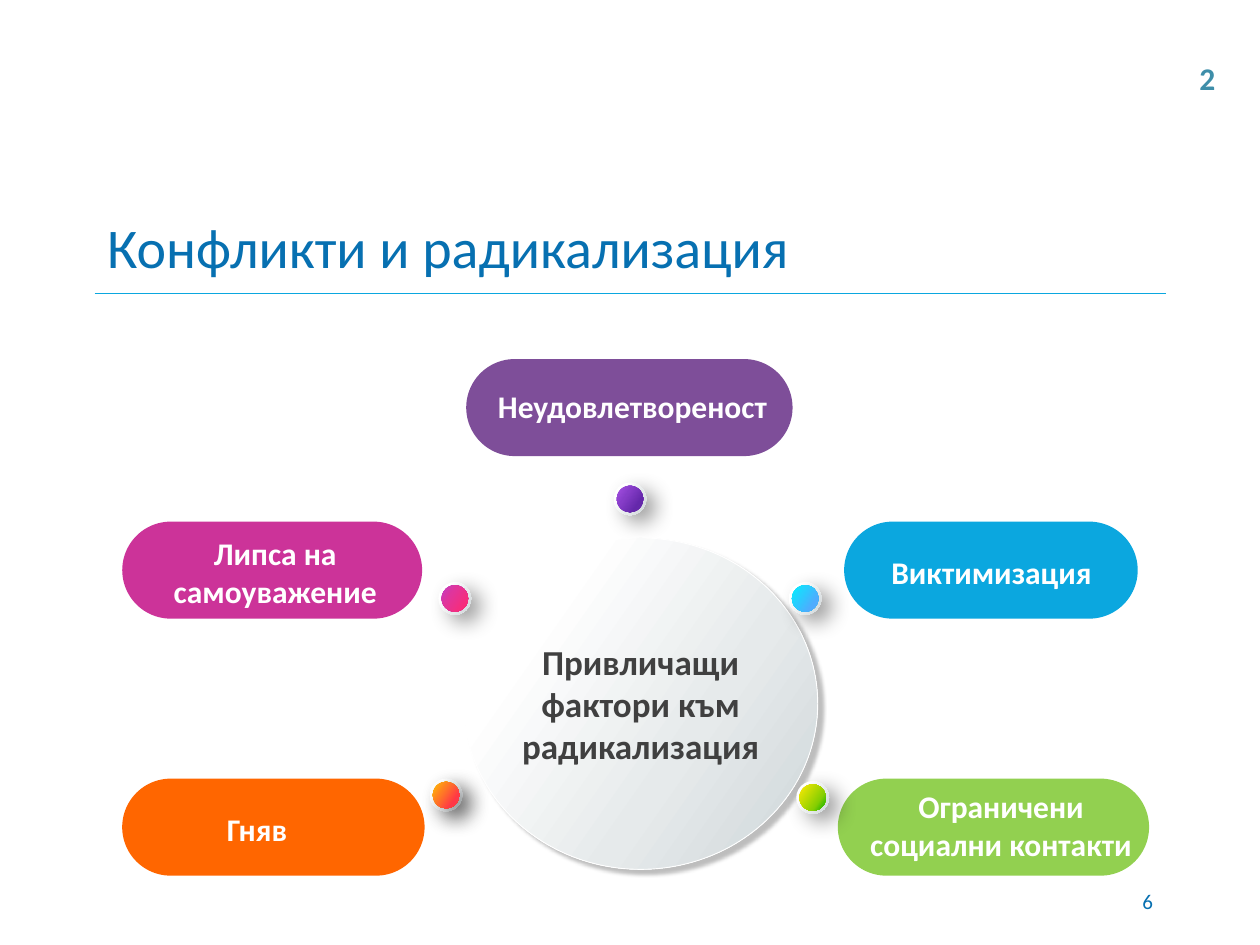
from lxml.etree import SubElement
from pptx import Presentation
from pptx.dml.color import RGBColor
from pptx.enum.shapes import MSO_CONNECTOR, MSO_SHAPE
from pptx.enum.text import MSO_ANCHOR, PP_ALIGN
from pptx.oxml.ns import qn
from pptx.util import Inches, Pt

TITLE = "Конфликти и радикализация"
CENTER = "Привличащи фактори към радикализация"
SILVER = [(23, "FFFFFF"), (63, "E6EAEB"), (100, "CDD5D8")]
HUB_SHADOW = ("000000", 26, 2, 3.7)
BEAD_SHADOW = ("000000", 38, 12, 7.1)
PILL_H, HALO, CORE = 0.77, 0.26, 0.21
ROWS = {"top": 2.85, "middle": 4.14, "bottom": 6.18}
FACTORS = [
    {"text": "Гняв", "label": (1.33, 6.39, 1.42, 0.38),
     "row": "bottom", "pill": (0.97, 2.4), "color": "FF6600", "bead": (3.41, 6.18),
     "core": [(0, "FFC203"), (37, "FF7D25"), (77, "FF3847")], "core_shadow": BEAD_SHADOW},
    {"text": "Липса на самоуважение", "label": (1.08, 4.2, 2.21, 0.68),
     "row": "middle", "pill": (0.97, 2.38), "color": "CC3399", "bead": (3.48, 4.62),
     "core": [(1, "C23FC6"), (36, "E1359B"), (98, "FF2A70")]},
    {"text": "Неудовлетвореност", "label": (3.9, 3.03, 2.24, 0.38),
     "row": "top", "pill": (3.7, 2.59), "color": "7E4E99", "bead": (4.87, 3.83),
     "core": [(0, "A852E6"), (37, "863DC8"), (77, "6428AA")]},
    {"text": "Виктимизация", "label": (7, 4.35, 1.74, 0.38),
     "row": "middle", "pill": (6.7, 2.33), "color": "0BA7DF", "bead": (6.26, 4.62),
     "core": [(0, "00F2FE"), (37, "28CFFE"), (77, "4FACFE")]},
    {"text": "Ограничени социални контакти", "label": (6.77, 6.21, 2.35, 0.68),
     "row": "bottom", "pill": (6.65, 2.47), "color": "92D050", "bead": (6.32, 6.2),
     "core": [(0, "FFEA03"), (71, "85CE02"), (98, "0CB100")]},
]


def rgb(value):
    return RGBColor.from_string(value)


def write(tf, text, size, color, bold=False, align=PP_ALIGN.CENTER,
          anchor=MSO_ANCHOR.TOP, inset=None, wrap=True):
    tf.word_wrap = wrap
    tf.vertical_anchor = anchor
    if inset is not None:
        tf.margin_left = tf.margin_right = tf.margin_top = tf.margin_bottom = Inches(inset)
    p = tf.paragraphs[0]
    p.text = text
    p.alignment = align
    p.font.name, p.font.size, p.font.bold = "Calibri", Pt(size), bold
    p.font.color.rgb = rgb(color)


def add_text(s, box, *args, **kwargs):
    write(s.shapes.add_textbox(*map(Inches, box)).text_frame, *args, **kwargs)


def add_plain(s, kind, box):
    sp = s.shapes.add_shape(kind, *map(Inches, box))
    sp.line.fill.background()
    sp.shadow.inherit = False
    return sp


def add_disc(s, box, stops, shadow=None):
    sp = add_plain(s, MSO_SHAPE.OVAL, box)
    sp.fill.gradient()
    grad = sp._element.spPr.find(qn("a:gradFill"))
    for child in list(grad):
        grad.remove(child)
    gs_list = SubElement(grad, qn("a:gsLst"))
    for pos, color in stops:
        gs = SubElement(gs_list, qn("a:gs"), pos=str(pos * 1000))
        SubElement(gs, qn("a:srgbClr"), val=color)
    SubElement(grad, qn("a:lin"), ang=str(35 * 60000), scaled="0")
    if shadow:
        color, alpha, blur, dist = shadow
        effects = sp._element.spPr.find(qn("a:effectLst"))
        outer = SubElement(effects, qn("a:outerShdw"), blurRad=str(int(Pt(blur))),
                           dist=str(int(Pt(dist))), dir=str(39 * 60000),
                           algn="tl", rotWithShape="0")
        clr = SubElement(outer, qn("a:srgbClr"), val=color)
        SubElement(clr, qn("a:alpha"), val=str(alpha * 1000))
    return sp


def add_pill(s, factor):
    left, width = factor["pill"]
    sp = add_plain(s, MSO_SHAPE.ROUNDED_RECTANGLE, (left, ROWS[factor["row"]], width, PILL_H))
    sp.adjustments[0] = 0.5
    sp.fill.solid()
    sp.fill.fore_color.rgb = rgb(factor["color"])


def add_bead(s, factor):
    x, y = factor["bead"]
    gap = (HALO - CORE) / 2
    add_disc(s, (x, y, HALO, HALO), SILVER, BEAD_SHADOW)
    add_disc(s, (x + gap, y + gap, CORE, CORE), factor["core"], factor.get("core_shadow"))


def main():
    prs = Presentation()
    prs.slide_width, prs.slide_height = Inches(10), Inches(7.5)
    s = prs.slides.add_slide(prs.slide_layouts[5])

    title = s.shapes.title
    title.left, title.top, title.width, title.height = map(Inches, (0.75, 1.58, 8.5, 0.75))
    write(title.text_frame, TITLE, 32, "0770B1", align=PP_ALIGN.LEFT, anchor=MSO_ANCHOR.MIDDLE)

    rule = s.shapes.add_connector(MSO_CONNECTOR.STRAIGHT, *map(Inches, (0.75, 2.33, 9.25, 2.33)))
    rule.line.color.rgb = rgb("0BA7DF")
    rule.line.width = Pt(0.75)
    SubElement(rule._element.spPr, qn("a:effectLst"))

    hub = add_disc(s, (3.68, 4.27, 2.81, 2.63), SILVER, HUB_SHADOW)
    hub.line.color.rgb = rgb("FFFFFF")
    hub.line.width = Pt(0.5)
    write(hub.text_frame, CENTER, 20, "404040", True, anchor=MSO_ANCHOR.MIDDLE, inset=0.04)

    for add_part in (add_pill, add_bead):
        for factor in FACTORS:
            add_part(s, factor)
    for factor in FACTORS:
        add_text(s, factor["label"], factor["text"], 18, "FFFFFF", True, inset=0.04)

    add_text(s, (7.17, 6.95, 2.08, 0.4), "6", 12, "0770B1",
             align=PP_ALIGN.RIGHT, anchor=MSO_ANCHOR.MIDDLE)
    add_text(s, (9.42, 0.42, 0.33, 0.4), "2", 18, "3E8EA9", True,
             align=PP_ALIGN.LEFT, wrap=False)
    prs.save("out.pptx")


if __name__ == "__main__":
    main()
